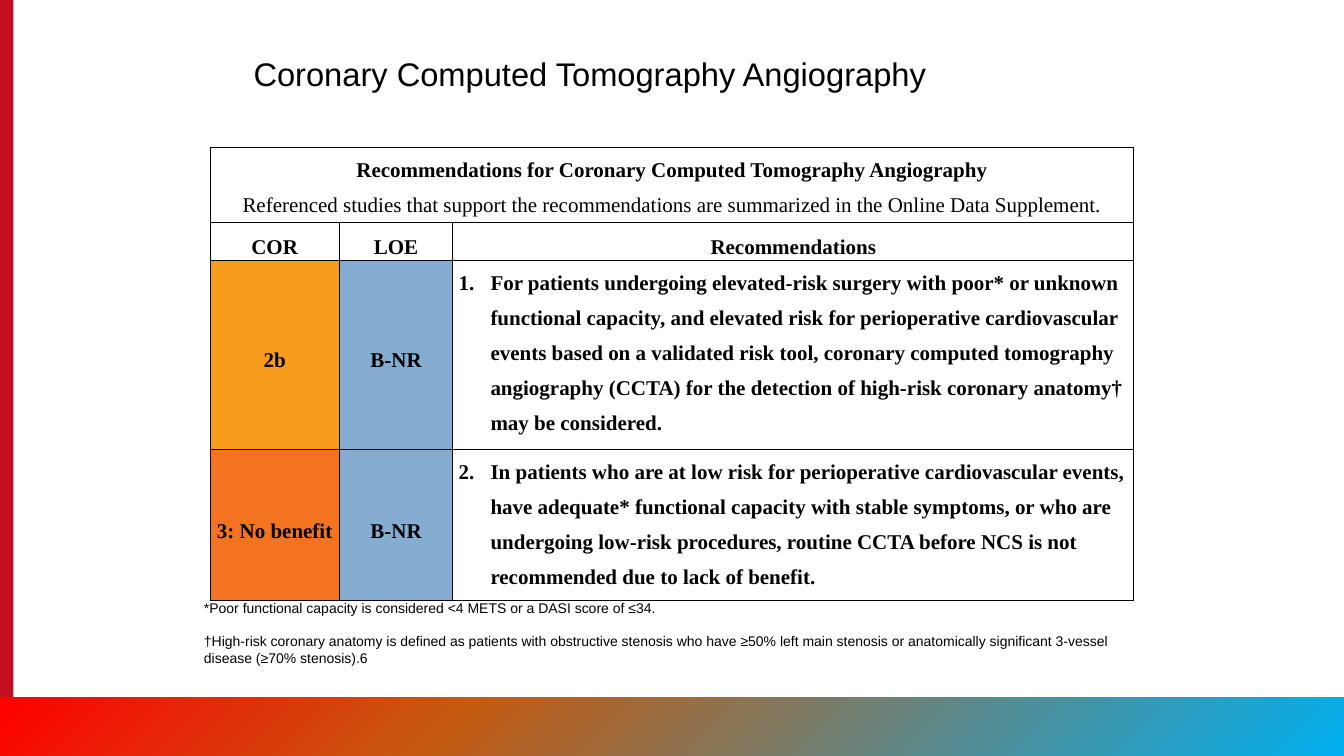
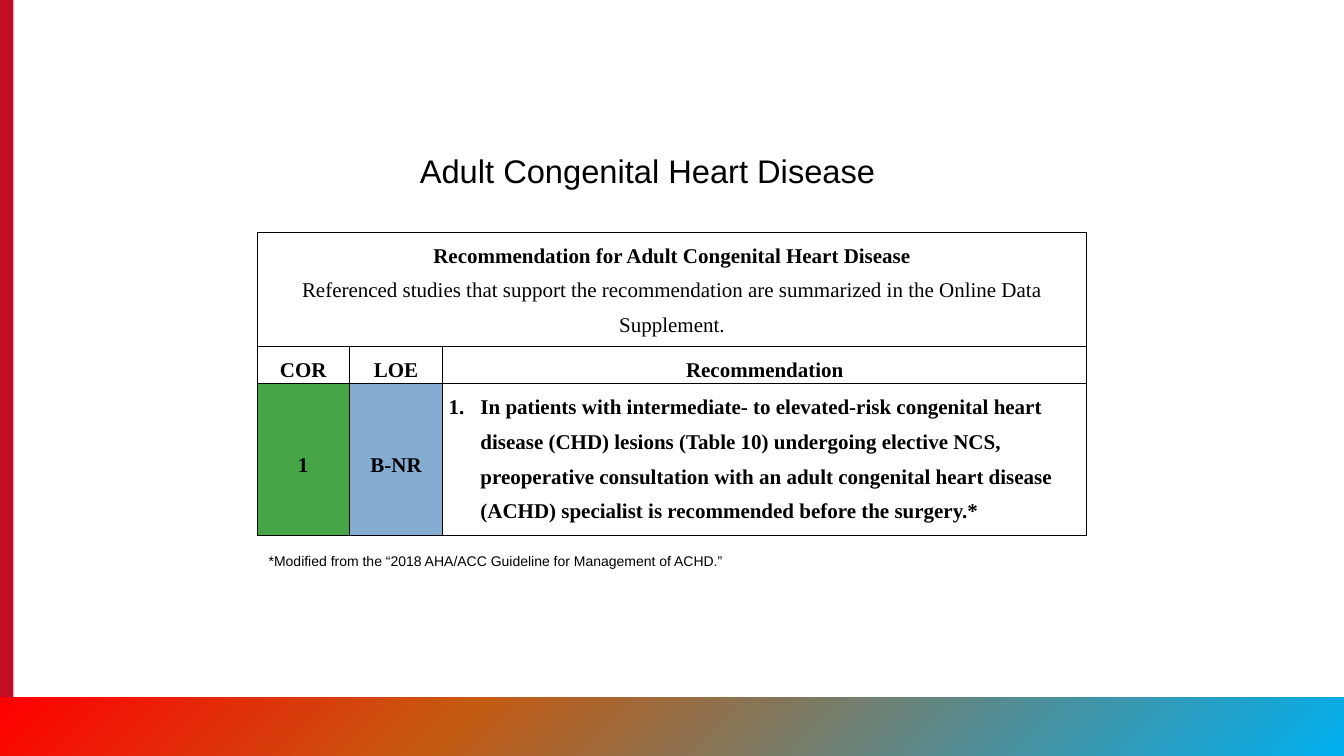
import pptx
import pptx.util
import pptx.dml.color
import pptx.enum.shapes
import pptx.enum.text
import pptx.oxml
import pptx.oxml.ns
from dataclasses import dataclass

Inch, Pt = pptx.util.Inches, pptx.util.Pt
Align = pptx.enum.text.PP_ALIGN
Anchor = pptx.enum.text.MSO_ANCHOR
Rect = pptx.enum.shapes.MSO_SHAPE.RECTANGLE
WIDE, HIGH = 16, 9


@dataclass(frozen=True)
class Theme:
    sans: str = "Arial"
    serif: str = "Times New Roman"
    title: int = 28
    body: int = 18
    note: int = 12
    ink: str = "000000"
    band: str = "C10E21"
    level: str = "85ADD1"
    fade: tuple = ((0, "00B0F0"), (66, "C55A11"), (100, "FF0000"))


THEME = Theme()
CLASS = {"1": "45A547", "2b": "F99B1C", "3: No benefit": "F37321"}

# Boxes are left, top, width, height in inches
SLIDES = [
    {
        "title": "Coronary Computed Tomography Angiography",
        "title_box": (2.92, 0.59, 9.5, 0.57),
        "head": "Recommendations for Coronary Computed Tomography Angiography",
        "sub": "Referenced studies that support the recommendations are "
               "summarized in the Online Data Supplement.",
        "label": "Recommendations",
        "advice": [
            ("2b", "B-NR",
             "For patients undergoing elevated-risk surgery with poor* or "
             "unknown functional capacity, and elevated risk for "
             "perioperative cardiovascular events based on a validated risk "
             "tool, coronary computed tomography angiography (CCTA) for the "
             "detection of high-risk coronary anatomy† may be considered."),
            ("3: No benefit", "B-NR",
             "In patients who are at low risk for perioperative "
             "cardiovascular events, have adequate* functional capacity with "
             "stable symptoms, or who are undergoing low-risk procedures, "
             "routine CCTA before NCS is not recommended due to lack of "
             "benefit."),
        ],
        "origin": (2.5, 1.75),
        "cols": (1.54, 1.35, 8.11),
        "rows": (0.89, 0.45, 2.25, 1.8),
        "notes": [
            "*Poor functional capacity is considered <4 METS or a DASI score "
            "of ≤34.",
            "†High-risk coronary anatomy is defined as patients with "
            "obstructive stenosis who have ≥50% left main stenosis or "
            "anatomically significant 3-vessel disease (≥70% stenosis).6",
        ],
        "note_box": (2.33, 7.09, 11.17, 0.91),
    },
    {
        "title": "Adult Congenital Heart Disease",
        "title_box": (4.9, 1.75, 6.2, 0.57),
        "head": "Recommendation for Adult Congenital Heart Disease",
        "sub": "Referenced studies that support the recommendation are "
               "summarized in the Online Data Supplement.",
        "label": "Recommendation",
        "advice": [
            ("1", "B-NR",
             "In patients with intermediate- to elevated-risk congenital "
             "heart disease (CHD) lesions (Table 10) undergoing elective NCS, "
             "preoperative consultation with an adult congenital heart "
             "disease (ACHD) specialist is recommended before the surgery.*"),
        ],
        "origin": (3.06, 2.77),
        "cols": (1.1, 1.11, 7.67),
        "rows": (1.35, 0.45, 1.81),
        "notes": ["*Modified from the “2018 AHA/ACC Guideline for Management "
                  "of ACHD.”"],
        "note_box": (3.1, 6.53, 6.31, 0.3),
    },
]


def color(code):
    return pptx.dml.color.RGBColor.from_string(code)


def xml(text):
    """Parse an element, declaring its namespace after the tag name."""
    space = pptx.oxml.ns.nsdecls("a")
    return pptx.oxml.parse_xml(text.replace(" ", f" {space} ", 1))


def style(para, face, size, bold=False):
    font = para.font
    font.name, font.size, font.bold = face, Pt(size), bold
    font.color.rgb = color(THEME.ink)


def add_band(slide, *box):
    band = slide.shapes.add_shape(Rect, *map(Inch, box))
    band.shadow.inherit = False
    band.line.fill.background()
    band.fill.solid()
    band.fill.fore_color.rgb = color(THEME.band)
    return band


def add_frame(slide):
    """Draw the side band and the fading foot shared by all slides."""
    add_band(slide, 0, 0, 0.16, HIGH)
    foot = add_band(slide, 0, 8.3, WIDE, 0.7)
    foot.rotation = 180
    stops = "".join(
        f'<a:gs pos="{pos * 1000}"><a:srgbClr val="{code}"/></a:gs>'
        for pos, code in THEME.fade)
    props = foot._element.spPr
    solid = props.find(pptx.oxml.ns.qn("a:solidFill"))
    props.replace(solid, xml(
        f'<a:gradFill rotWithShape="1"><a:gsLst>{stops}</a:gsLst>'
        '<a:lin ang="2700000" scaled="0"/></a:gradFill>'))


def add_text(slide, box, lines, size):
    frame = slide.shapes.add_textbox(*map(Inch, box)).text_frame
    frame.word_wrap = True
    frame.text = "\n".join(lines)
    for num, para in enumerate(frame.paragraphs):
        if num:
            para.space_before = Pt(14)
        style(para, THEME.sans, size)


def add_rule(cell):
    props = cell._tc.get_or_add_tcPr()
    for spot, side in enumerate("LRTB"):
        props.insert(spot, xml(
            f'<a:ln{side} w="12700"><a:solidFill>'
            f'<a:srgbClr val="{THEME.ink}"/></a:solidFill></a:ln{side}>'))


def fill_cell(cell, lines, fill=None, start=None):
    """Write bold lines, centred, or numbered when start is given."""
    cell.margin_left = cell.margin_right = Inch(0.07)
    cell.margin_top = cell.margin_bottom = 0
    cell.text = "\n".join(lines)
    if fill:
        cell.fill.solid()
        cell.fill.fore_color.rgb = color(fill)
    else:
        cell.fill.background()
    cell.vertical_anchor = Anchor.TOP if start else Anchor.MIDDLE
    for num, para in enumerate(cell.text_frame.paragraphs):
        para.line_spacing = 1.5
        para.alignment = Align.LEFT if start else Align.CENTER
        if start:
            props = para._p.get_or_add_pPr()
            props.set("marL", str(Inch(0.38)))
            props.set("indent", str(-Inch(0.38)))
            props.append(xml(
                f'<a:buAutoNum type="arabicPeriod" startAt="{start}"/>'))
        style(para, THEME.serif, THEME.body, bold=num == 0)


def add_grid(slide, data):
    cols, rows = data["cols"], data["rows"]
    box = (*data["origin"], sum(cols), sum(rows))
    grid = slide.shapes.add_table(
        len(rows), len(cols), *map(Inch, box)).table
    grid.first_row = grid.horz_banding = False
    for col, width in zip(grid.columns, cols):
        col.width = Inch(width)
    for row, height in zip(grid.rows, rows):
        row.height = Inch(height)

    top = grid.cell(0, 0)
    top.merge(grid.cell(0, len(cols) - 1))
    fill_cell(top, [data["head"], data["sub"]])
    top.vertical_anchor = Anchor.TOP
    for col, text in enumerate(("COR", "LOE", data["label"])):
        fill_cell(grid.cell(1, col), [text])
    for num, (rank, level, text) in enumerate(data["advice"], 1):
        fill_cell(grid.cell(num + 1, 0), [rank], CLASS[rank])
        fill_cell(grid.cell(num + 1, 1), [level], THEME.level)
        fill_cell(grid.cell(num + 1, 2), [text], start=num)
    for cell in grid.iter_cells():
        add_rule(cell)


def main():
    deck = pptx.Presentation()
    deck.slide_width, deck.slide_height = Inch(WIDE), Inch(HIGH)
    for data in SLIDES:
        slide = deck.slides.add_slide(deck.slide_layouts[6])
        add_frame(slide)
        add_text(slide, data["title_box"], [data["title"]], THEME.title)
        add_grid(slide, data)
        add_text(slide, data["note_box"], data["notes"], THEME.note)
    deck.save("out.pptx")


if __name__ == "__main__":
    main()
